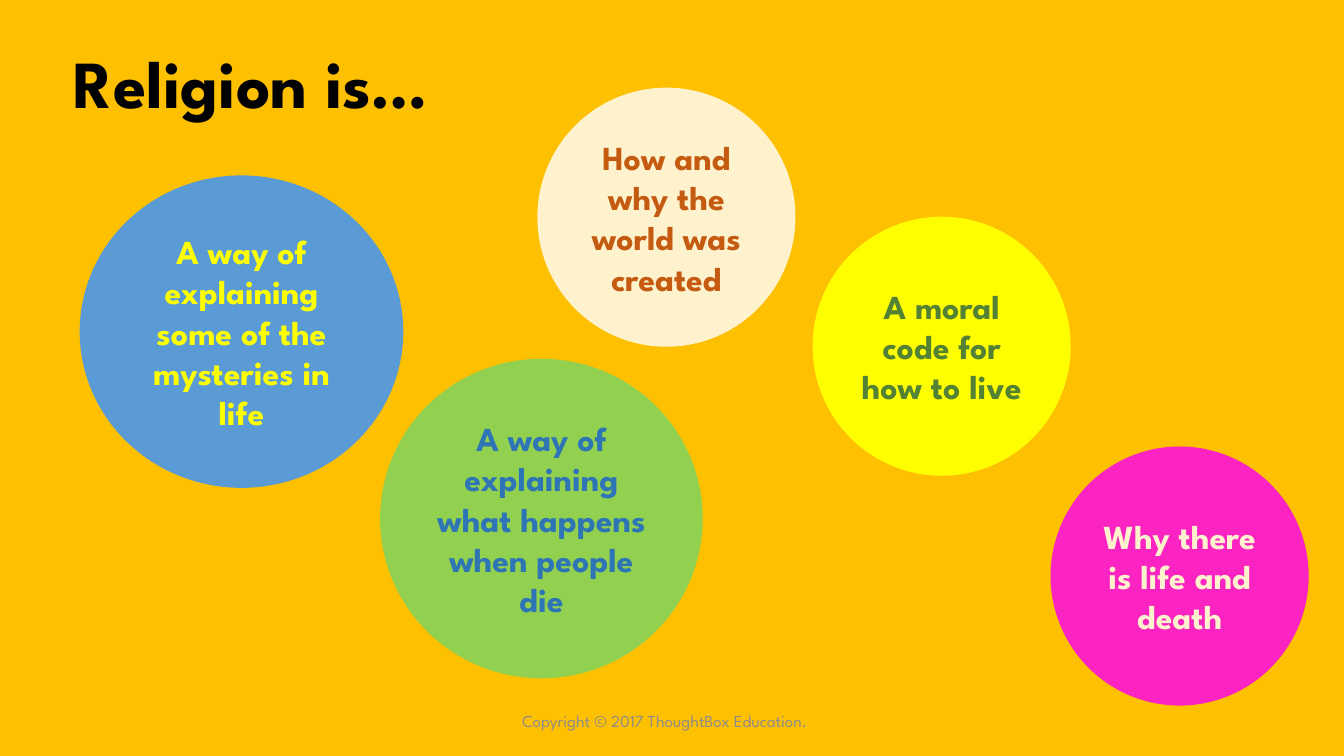
import pptx
import pptx.dml.color
import pptx.enum.shapes
import pptx.enum.text
import pptx.util

FONT = "League Spartan"
SLIDE_SIZE = (13.33, 7.5)
BACKGROUND = "FFC000"
HEADING = "Religion is…"
COPYRIGHT = "Copyright © 2017 ThoughtBox Education."

SMALL = (2.56, 2.57)
# wording, left and top, size, fill, text colour
IDEAS = [
    ("A way of explaining some of the mysteries in life",
     (0.79, 1.74), (3.21, 3.1), "5B9BD5", "FFFF00"),
    ("How and why the world was created",
     (5.33, 0.87), SMALL, "FFF2CC", "C55A11"),
    ("A way of explaining what happens when people die",
     (3.77, 3.56), (3.2, 3.17), "92D050", "2E75B6"),
    ("A moral code for how to live",
     (8.06, 2.15), SMALL, "FFFF00", "548235"),
    ("Why there is life and death",
     (10.42, 4.43), SMALL, "FB23C2", "FFF2CC"),
]

ALIGN = pptx.enum.text.PP_ALIGN
ANCHOR = pptx.enum.text.MSO_ANCHOR


def inches(*lengths):
    return [pptx.util.Inches(length) for length in lengths]


def paint(fill, colour):
    fill.solid()
    fill.fore_color.rgb = pptx.dml.color.RGBColor.from_string(colour)


def write(frame, wording, size, colour, bold=True, align=ALIGN.CENTER, anchor=ANCHOR.MIDDLE):
    """Put one formatted paragraph in a text frame and return it."""
    frame.text = wording
    frame.word_wrap = True
    frame.auto_size = pptx.enum.text.MSO_AUTO_SIZE.NONE
    frame.vertical_anchor = anchor
    paragraph = frame.paragraphs[0]
    paragraph.alignment = align
    font = paragraph.font
    font.name, font.size, font.bold = FONT, pptx.util.Pt(size), bold
    paint(font.fill, colour)
    return paragraph


def main():
    deck = pptx.Presentation()
    deck.slide_width, deck.slide_height = inches(*SLIDE_SIZE)
    slide = deck.slides.add_slide(deck.slide_layouts[5])
    paint(slide.background.fill, BACKGROUND)

    heading = slide.shapes.title
    heading.left, heading.top, heading.width, heading.height = inches(0.63, 0.38, 11.5, 0.89)
    line = write(heading.text_frame, HEADING, 48, "000000",
                 align=ALIGN.LEFT, anchor=ANCHOR.BOTTOM)
    line.line_spacing = 0.9

    footer = slide.shapes.add_textbox(*inches(4.42, 6.95, 4.5, 0.4)).text_frame
    write(footer, COPYRIGHT, 12, "8C8C8C", bold=False)
    footer.margin_right = pptx.util.Inches(0.25)

    for wording, corner, size, fill, colour in IDEAS:
        bubble = slide.shapes.add_shape(
            pptx.enum.shapes.MSO_SHAPE.OVAL, *inches(*corner, *size))
        bubble.shadow.inherit = False
        bubble.line.fill.background()
        paint(bubble.fill, fill)
        write(bubble.text_frame, wording, 24, colour)

    deck.save("out.pptx")


if __name__ == "__main__":
    main()
